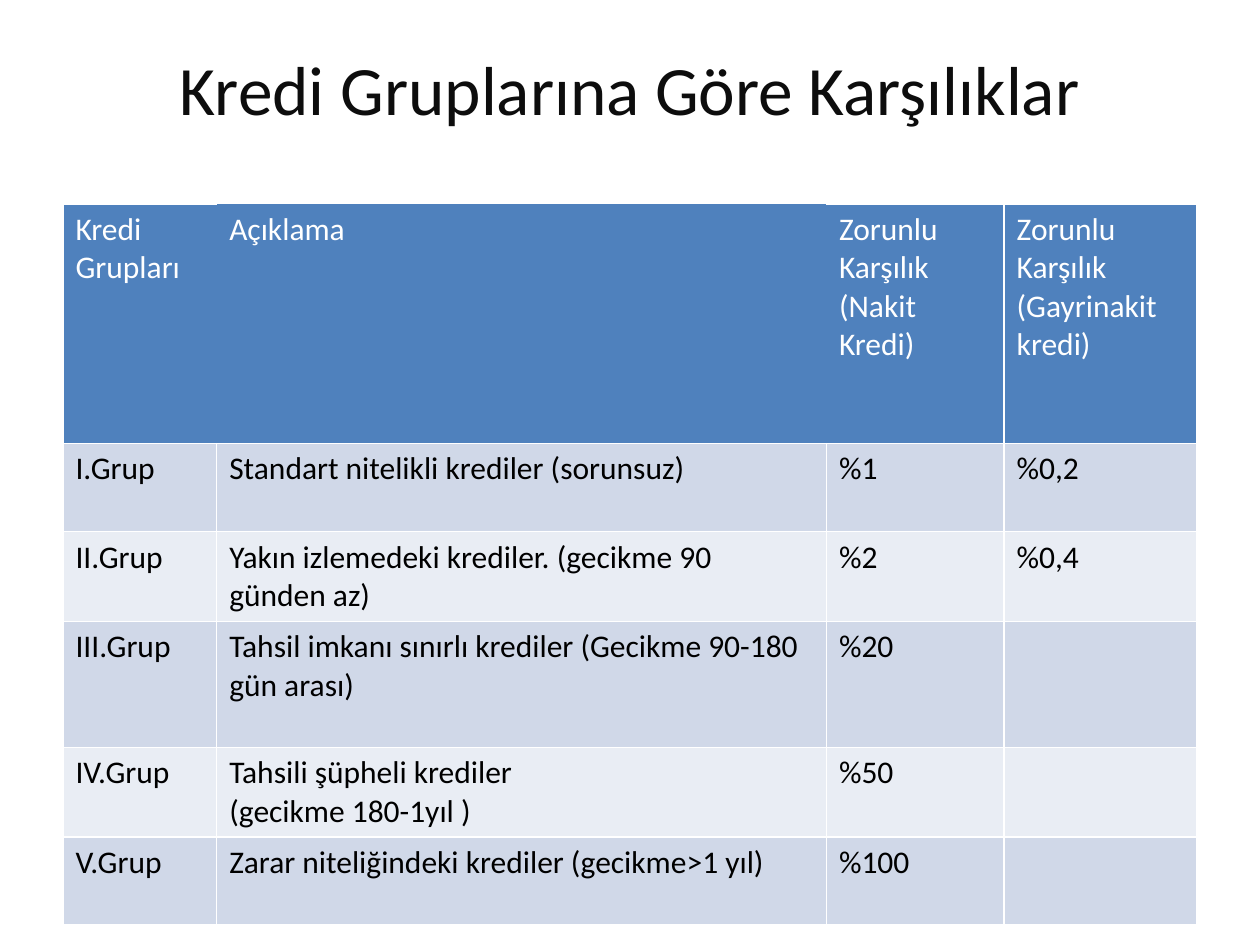
from lxml.etree import SubElement
from pptx import Presentation
from pptx.dml.color import RGBColor
from pptx.enum.text import MSO_ANCHOR, PP_ALIGN
from pptx.oxml.ns import qn
from pptx.util import Inches, Pt

TITLE = "Kredi Gruplarına Göre Karşılıklar"
ROWS = [
    ("Kredi Grupları", "Açıklama", "Zorunlu Karşılık (Nakit Kredi)",
     "Zorunlu Karşılık (Gayrinakit kredi)"),
    ("I.Grup", "Standart nitelikli krediler (sorunsuz)", "%1", "%0,2"),
    ("II.Grup", "Yakın izlemedeki krediler. (gecikme 90 günden az)", "%2", "%0,4"),
    ("III.Grup", "Tahsil imkanı sınırlı krediler (Gecikme 90-180 gün arası)", "%20", ""),
    ("IV.Grup", "Tahsili şüpheli krediler\n(gecikme 180-1yıl )", "%50", ""),
    ("V.Grup", "Zarar niteliğindeki krediler (gecikme>1 yıl)", "%100", ""),
]
COLUMN_WIDTHS = [1.22, 4.84, 1.41, 1.53]
ROW_HEIGHTS = [1.9, 0.7, 0.7, 1, 0.7, 0.7]
MARGIN, TABLE_TOP = 0.5, 1.62
COLORS = {"title": "0D0D0D", "header": "4F81BD", "header_text": "FFFFFF",
          "odd": "D0D8E8", "even": "E9EDF4", "text": "000000", "border": "FFFFFF"}
FONT = "Calibri"
# Header cell sides left without a line, by column: the description has none around it
OPEN_HEADER_SIDES = {0: "R", 1: "LRTB", 2: "L"}


def format_text(text_frame, size, color):
    for paragraph in text_frame.paragraphs:
        for run in paragraph.runs:
            run.font.name = FONT
            run.font.size = Pt(size)
            run.font.bold = False
            run.font.color.rgb = RGBColor.from_string(color)


def set_borders(cell, open_sides):
    properties = cell._tc.get_or_add_tcPr()
    for side in "LRTB":
        line = SubElement(properties, qn(f"a:ln{side}"), w=str(Pt(1)))
        if side in open_sides:
            SubElement(line, qn("a:noFill"))
        else:
            fill = SubElement(line, qn("a:solidFill"))
            SubElement(fill, qn("a:srgbClr"), val=COLORS["border"])


def add_title(slide):
    title = slide.shapes.title
    title.left, title.top = Inches(MARGIN), Inches(0.3)
    title.width, title.height = Inches(sum(COLUMN_WIDTHS)), Inches(0.79)
    title.text_frame.text = TITLE
    title.text_frame.vertical_anchor = MSO_ANCHOR.MIDDLE
    title.text_frame.paragraphs[0].alignment = PP_ALIGN.CENTER
    format_text(title.text_frame, 39.6, COLORS["title"])


def add_credit_table(slide):
    table = slide.shapes.add_table(
        len(ROWS), len(COLUMN_WIDTHS), Inches(MARGIN), Inches(TABLE_TOP),
        Inches(sum(COLUMN_WIDTHS)), Inches(sum(ROW_HEIGHTS))).table
    for column, width in zip(table.columns, COLUMN_WIDTHS):
        column.width = Inches(width)
    for row, height in zip(table.rows, ROW_HEIGHTS):
        row.height = Inches(height)
    for row_index, texts in enumerate(ROWS):
        is_header = row_index == 0
        band = "header" if is_header else "odd" if row_index % 2 else "even"
        for column_index, text in enumerate(texts):
            cell = table.cell(row_index, column_index)
            cell.text_frame.text = text
            format_text(cell.text_frame, 18, COLORS["header_text" if is_header else "text"])
            set_borders(cell, OPEN_HEADER_SIDES.get(column_index, "") if is_header else "")
            cell.fill.solid()
            cell.fill.fore_color.rgb = RGBColor.from_string(COLORS[band])


def main():
    presentation = Presentation()
    presentation.slide_width, presentation.slide_height = Inches(10), Inches(7.5)
    slide = presentation.slides.add_slide(presentation.slide_layouts[5])
    add_title(slide)
    add_credit_table(slide)
    presentation.save("out.pptx")


if __name__ == "__main__":
    main()
